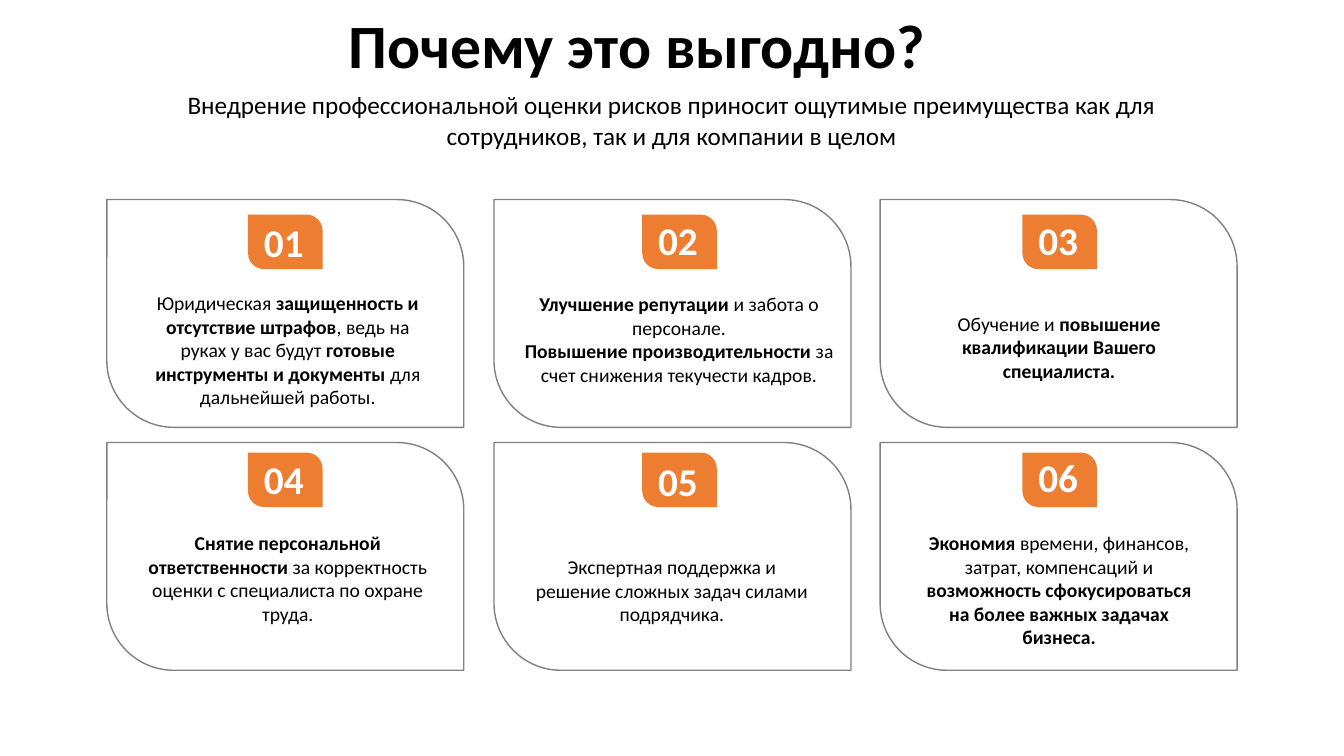
from dataclasses import dataclass

import pptx
import pptx.dml.color
import pptx.enum.shapes
import pptx.enum.text
import pptx.util

PX = pptx.util.Inches(0.01)
FONT = "Calibri"
COLORS = {"text": "000000", "badge": "ED7D31", "number": "FFFFFF", "outline": "808080"}
ALIGN = pptx.enum.text.PP_ALIGN
CARD_SIZE = (354, 226)
BADGE_SIZE = (74, 54)
NUMBER_SIZE = (60, 57)
NUMBER_INDENT = 6


@dataclass(frozen=True)
class Band:
    card: int
    badge: int


@dataclass(frozen=True)
class Phrase:
    text: str
    bold: bool = False


@dataclass(frozen=True)
class Benefit:
    number_top: int
    area: tuple[int, int, int, int]
    paragraphs: tuple[tuple[Phrase, ...], ...]


COLUMNS = (Band(106, 246), Band(490, 637), Band(873, 1014))
ROWS = (Band(198, 213), Band(439, 449))

BENEFITS = (
    Benefit(212, (134, 284, 303, 128), ((
        Phrase("Юридическая "),
        Phrase("защищенность и отсутствие штрафов", True),
        Phrase(", ведь на руках у вас будут "),
        Phrase("готовые инструменты и документы ", True),
        Phrase("для дальнейшей работы."),
    ),)),
    Benefit(210, (509, 285, 329, 104), (
        (Phrase("Улучшение репутации ", True), Phrase("и забота о персонале.")),
        (Phrase("Повышение производительности ", True),
         Phrase("за счет снижения текучести кадров.")),
    )),
    Benefit(210, (899, 304, 303, 81), ((
        Phrase("Обучение и "),
        Phrase("повышение квалификации Вашего специалиста.", True),
    ),)),
    Benefit(447, (134, 522, 303, 104), ((
        Phrase("Снятие персональной ответственности ", True),
        Phrase("за корректность оценки с специалиста по охране труда."),
    ),)),
    Benefit(449, (515, 546, 303, 81), ((
        Phrase("Экспертная поддержка и решение сложных задач силами подрядчика."),
    ),)),
    Benefit(445, (899, 522, 303, 128), ((
        Phrase("Экономия ", True),
        Phrase("времени, финансов, затрат, компенсаций и "),
        Phrase("возможность сфокусироваться на более важных задачах бизнеса.", True),
    ),)),
)


def color(name: str) -> pptx.dml.color.RGBColor:
    return pptx.dml.color.RGBColor.from_string(COLORS[name])


def place(shape, area: tuple[int, int, int, int]) -> None:
    shape.left, shape.top, shape.width, shape.height = (value * PX for value in area)


def write(box, paragraphs: tuple[tuple[Phrase, ...], ...], size: int,
          align: ALIGN = ALIGN.CENTER, ink: str = "text", wrap: bool = True) -> None:
    frame = box.text_frame
    frame.word_wrap = wrap
    frame.auto_size = pptx.enum.text.MSO_AUTO_SIZE.NONE
    frame.vertical_anchor = pptx.enum.text.MSO_ANCHOR.TOP
    for index, phrases in enumerate(paragraphs):
        para = frame.add_paragraph() if index else frame.paragraphs[0]
        para.alignment = align
        para.space_before = pptx.util.Pt(0)
        para.font.name = FONT
        para.font.size = pptx.util.Pt(size)
        para.font.color.rgb = color(ink)
        for phrase in phrases:
            span = para.add_run()
            span.text = phrase.text
            span.font.bold = phrase.bold


def add_leaf(page, left: int, top: int, size: tuple[int, int]):
    leaf = page.shapes.add_shape(
        pptx.enum.shapes.MSO_SHAPE.ROUND_2_DIAG_RECTANGLE,
        *(value * PX for value in (left, top, *size)))
    leaf.adjustments[0] = 0
    leaf.adjustments[1] = 0.294
    leaf.shadow.inherit = False
    return leaf


def add_text(page, area: tuple[int, int, int, int]):
    return page.shapes.add_textbox(*(value * PX for value in area))


def add_benefit(page, number: int, benefit: Benefit, column: Band, row: Band) -> None:
    card = add_leaf(page, column.card, row.card, CARD_SIZE)
    card.fill.background()
    card.line.color.rgb = color("outline")
    card.line.width = pptx.util.Pt(1)

    badge = add_leaf(page, column.badge, row.badge, BADGE_SIZE)
    badge.fill.solid()
    badge.fill.fore_color.rgb = color("badge")
    badge.line.fill.background()

    label = add_text(page, (column.badge + NUMBER_INDENT, benefit.number_top, *NUMBER_SIZE))
    write(label, ((Phrase(f"{number:02d}", True),),), 28, ALIGN.LEFT, "number", wrap=False)

    write(add_text(page, benefit.area), benefit.paragraphs, 14)


def main() -> None:
    deck = pptx.Presentation()
    deck.slide_width = 1333 * PX
    deck.slide_height = 750 * PX
    page = deck.slides.add_slide(deck.slide_layouts[0])

    title, subtitle = page.placeholders
    place(title, (336, 2, 610, 84))
    write(title, ((Phrase("Почему это выгодно?", True),),), 44, ALIGN.LEFT)
    place(subtitle, (158, 84, 1016, 71))
    write(subtitle, ((Phrase(
        "Внедрение профессиональной оценки рисков приносит ощутимые преимущества "
        "как для сотрудников, так и для компании в целом"),),), 18)

    for index, benefit in enumerate(BENEFITS):
        row, column = divmod(index, len(COLUMNS))
        add_benefit(page, index + 1, benefit, COLUMNS[column], ROWS[row])

    deck.save("out.pptx")


if __name__ == "__main__":
    main()
